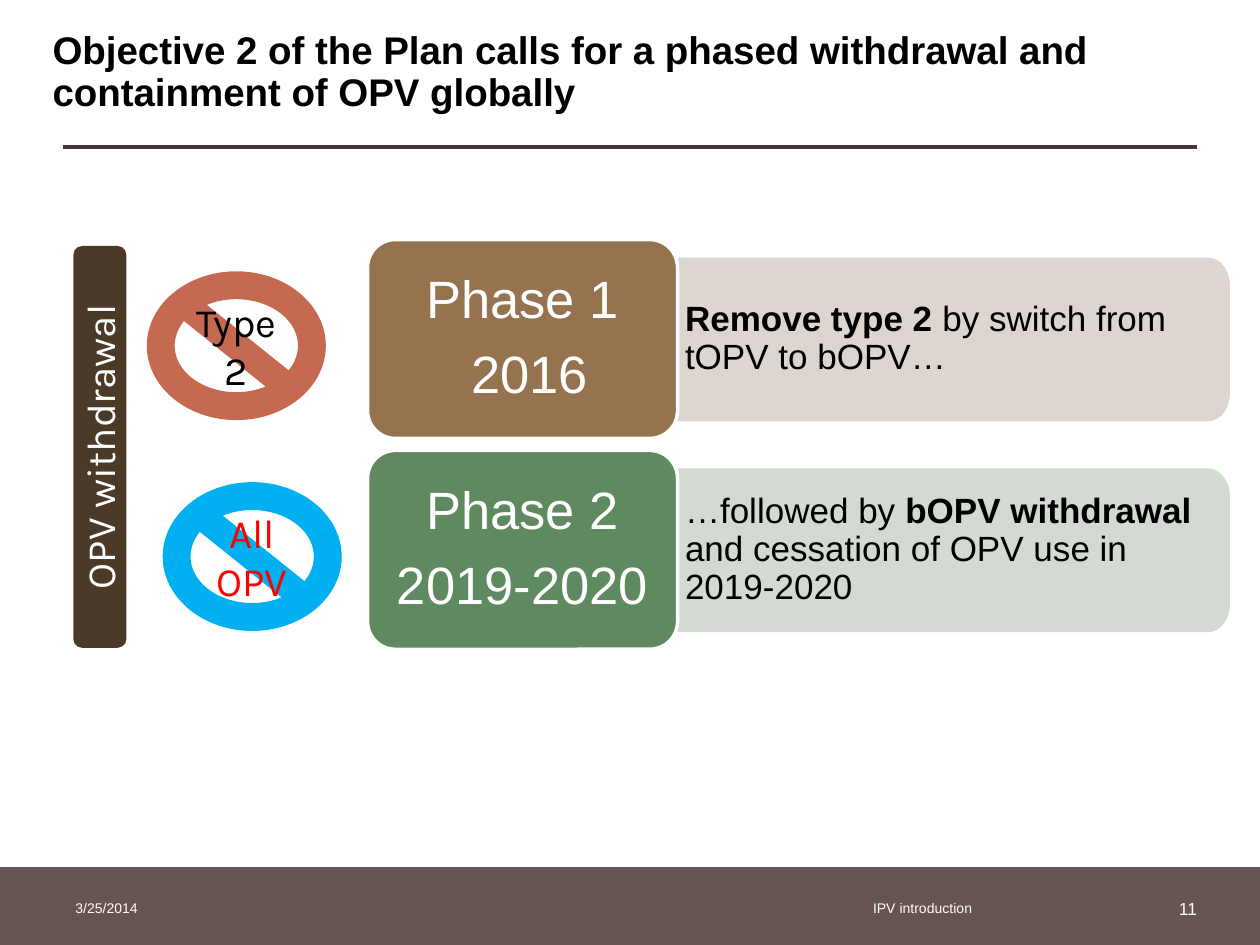
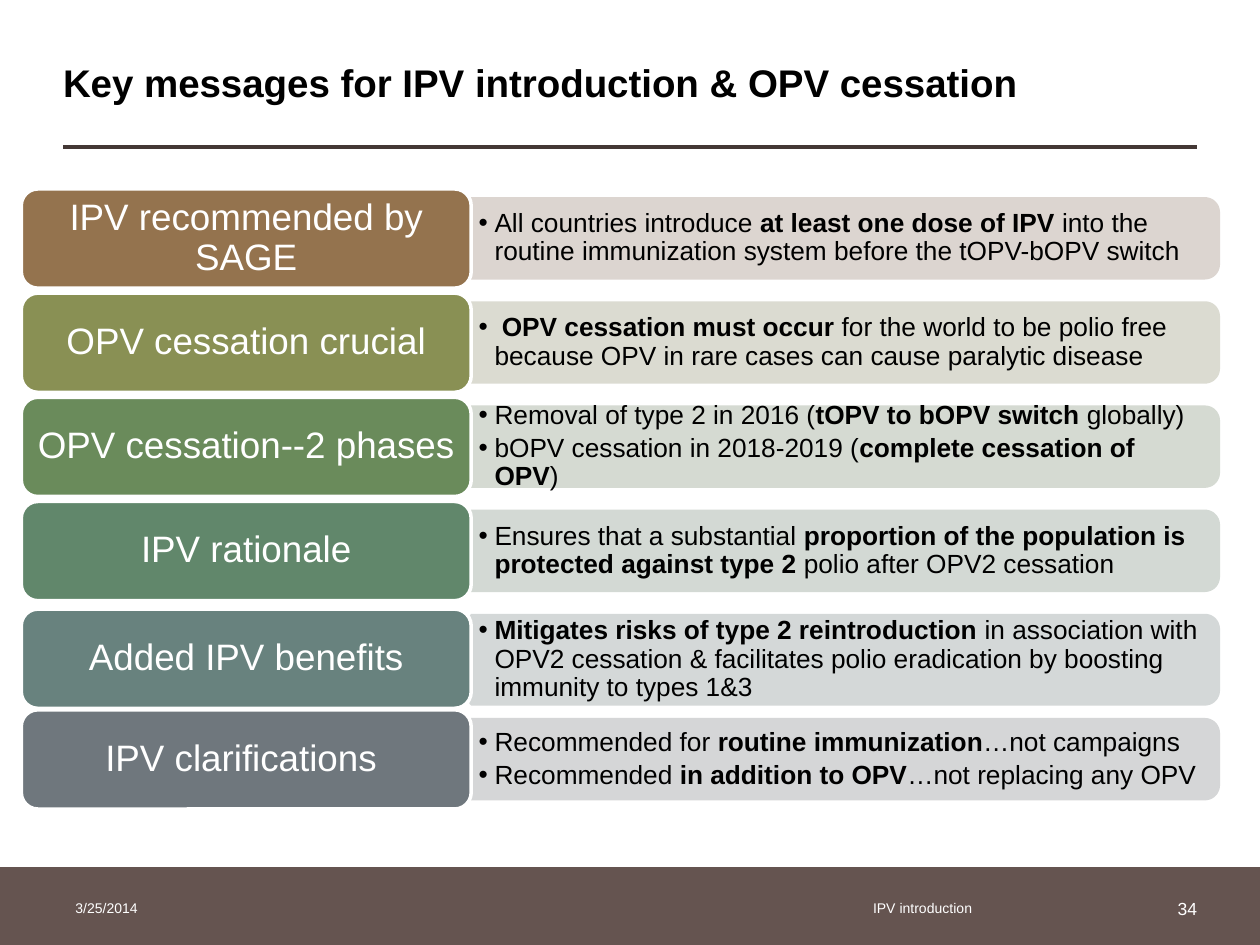
from dataclasses import dataclass
from math import cos, pi, sin
from typing import NamedTuple

from lxml.etree import SubElement
from pptx import Presentation
from pptx.dml.color import RGBColor
from pptx.enum.shapes import MSO_CONNECTOR, MSO_SHAPE
from pptx.enum.text import MSO_ANCHOR, PP_ALIGN
from pptx.oxml.ns import qn
from pptx.util import Cm, Pt

HEX = {
    "white": "FFFFFF", "black": "000000", "red": "FF0000",
    "rule": "443835", "band": "655450", "bar": "4A3A27",
    "rust": "C66951", "sky": "00B0F0",
    "brown": "94734E", "brown pale": "DCD5D0",
    "green": "5F895E", "green pale": "D3DAD2",
    "olive": "899054", "olive pale": "DBDBD1",
    "leaf": "6A8B5B", "leaf pale": "D5DAD2",
    "pine": "61876B", "pine pale": "D3D9D4",
    "teal": "68827E", "teal pale": "D4D8D8",
    "slate": "6F777D", "slate pale": "D5D6D7",
}
SANS, ROUND = "Arial", "Karla"


class Box(NamedTuple):
    """Left, top, width and height in centimetres."""
    x: float
    y: float
    w: float
    h: float


class Run(NamedTuple):
    text: str
    bold: bool = False


@dataclass
class Style:
    size: float
    ink: str = "black"
    font: str = SANS
    align: PP_ALIGN = PP_ALIGN.LEFT
    pad: tuple = (0.25, 0.13, 0.25, 0.13)
    lead: float = 1.0
    after: float = 0.0  # share of the text size
    dot: bool = False


@dataclass
class Phase:
    tone: str
    head: list
    body: list
    sign: str
    sign_x: float
    sign_fill: str
    sign_ink: str


@dataclass
class Topic:
    tone: str
    head: str
    body: list
    drop: float = 0.0
    tall: float = 1.59


def rgb(name: str) -> RGBColor:
    return RGBColor.from_string(HEX[name])


# Text and shape helpers
def write(shape, paras: list, style: Style, anchor=MSO_ANCHOR.MIDDLE) -> None:
    frame = shape.text_frame
    frame.word_wrap = True
    frame.vertical_anchor = anchor
    (frame.margin_left, frame.margin_top,
     frame.margin_right, frame.margin_bottom) = map(Cm, style.pad)
    for i, runs in enumerate(paras):
        para = frame.add_paragraph() if i else frame.paragraphs[0]
        para.alignment = style.align
        para.line_spacing = style.lead
        para.space_before = Pt(0)
        para.space_after = Pt(round(style.size * style.after, 1))
        if style.dot:
            props = para._p.get_or_add_pPr()
            props.set("marL", str(Cm(0.32)))
            props.set("indent", str(-Cm(0.32)))
            SubElement(props, qn("a:buFont")).set("typeface", SANS)
            SubElement(props, qn("a:buChar")).set("char", "•")
        for part in runs:
            run = para.add_run()
            run.text = part.text
            font = run.font
            font.name, font.size, font.bold = style.font, Pt(style.size), part.bold
            font.color.rgb = rgb(style.ink)


def paint(shape, fill: str, edge: str = "") -> None:
    shape.shadow.inherit = False
    shape.fill.solid()
    shape.fill.fore_color.rgb = rgb(fill)
    if edge:
        shape.line.color.rgb = rgb(edge)
        shape.line.width = Pt(2)
    else:
        shape.line.fill.background()


def draw(slide, kind: MSO_SHAPE, box: Box, fill: str, edge: str = ""):
    shape = slide.shapes.add_shape(kind, *map(Cm, box))
    paint(shape, fill, edge)
    return shape


def panel(slide, box: Box, rx: float, ry: float, tone: str):
    """Draw a pale box with round corners on the right side only."""
    right, foot = box.x + box.w, box.y + box.h
    turns = [i * pi / 24 for i in range(13)]
    top = [(right - rx + rx * sin(t), box.y + ry - ry * cos(t)) for t in turns]
    low = [(right - rx + rx * cos(t), foot - ry + ry * sin(t)) for t in turns]
    pen = slide.shapes.build_freeform(Cm(box.x), Cm(box.y))
    pen.add_line_segments([(Cm(x), Cm(y)) for x, y in top + low + [(box.x, foot)]])
    shape = pen.convert_to_shape()
    paint(shape, tone, tone)
    return shape


def label(slide, box: Box, text: str, style: Style) -> None:
    write(slide.shapes.add_textbox(*map(Cm, box)), [[Run(text)]], style)


# Title, rule and footer that every slide has
def start(deck, title: str, box: Box, page: str):
    slide = deck.slides.add_slide(deck.slide_layouts[5])
    rule = slide.shapes.add_connector(
        MSO_CONNECTOR.STRAIGHT, Cm(1.27), Cm(2.97), Cm(24.13), Cm(2.97))
    rule.line.color.rgb = rgb("rule")
    rule.line.width = Pt(2.25)
    SubElement(rule._element.spPr, qn("a:effectLst"))
    draw(slide, MSO_SHAPE.RECTANGLE, Box(0, 17.48, 25.4, 1.57), "band")

    head = slide.shapes.title
    head.left, head.top, head.width, head.height = map(Cm, box)
    write(head, [[Run(title, True)]],
          Style(22, pad=(0, 0, 0, 0), lead=0.9), MSO_ANCHOR.TOP)

    small = Style(8, "white")
    label(slide, Box(1.27, 17.8, 5.92, 1.02), "3/25/2014", small)
    label(slide, Box(17.35, 17.8, 6.4, 1.02), "IPV introduction", small)
    label(slide, Box(23.31, 17.8, 1.07, 1.02), page,
          Style(10, "white", align=PP_ALIGN.RIGHT))
    return slide


# Slide with the two withdrawal phases
PHASES = [
    Phase("brown", ["Phase 1", " 2016"],
          [Run("Remove type 2 ", True), Run("by switch from tOPV to bOPV…")],
          "Type 2", 2.96, "rust", "black"),
    Phase("green", ["Phase 2", "2019-2020"],
          [Run("…followed by "), Run("bOPV withdrawal ", True),
           Run("and cessation of OPV use in 2019-2020")],
          "All OPV", 3.28, "sky", "red"),
]


def phases(deck) -> None:
    slide = start(
        deck, "Objective 2 of the Plan calls for a phased withdrawal and "
        "containment of OPV globally", Box(1.06, 0.64, 22.86, 1.7), "11")
    mid = PP_ALIGN.CENTER
    bar = draw(slide, MSO_SHAPE.ROUNDED_RECTANGLE, Box(1.48, 4.96, 1.07, 8.1), "bar")
    write(bar, [[Run("OPV withdrawal")]], Style(23, "white", ROUND, mid))
    bar.text_frame._txBody.bodyPr.set("vert", "vert270")

    big = Style(30, "white", align=mid, pad=(0.33, 0.18, 0.33, 0.18),
                lead=0.9, after=0.35)
    note = Style(20, pad=(0.15, 0.23, 0.3, 0.23), lead=0.9, after=0.15)
    for i, item in enumerate(PHASES):
        y = 4.83 + 4.25 * i
        body = panel(slide, Box(13.66, y + 0.4, 11.1, 3.23), 0.41, 0.53,
                     item.tone + " pale")
        write(body, [item.body], note)
        head = draw(slide, MSO_SHAPE.ROUNDED_RECTANGLE,
                    Box(7.41, y, 6.25, 4.01), item.tone, "white")
        head.adjustments[0] = 0.14
        write(head, [[Run(text)] for text in item.head], big)
        sign = draw(slide, MSO_SHAPE.NO_SYMBOL,
                    Box(item.sign_x, y + 0.64, 3.61, 3), item.sign_fill)
        write(sign, [[Run(item.sign)]], Style(23, item.sign_ink, ROUND, mid))


# Slide with the key messages
TOPICS = [
    Topic("brown", "IPV recommended by SAGE", [
        [Run("All countries introduce "), Run("at least one dose of IPV ", True),
         Run("into the routine immunization system before the tOPV-bOPV switch")]]),
    Topic("olive", "OPV cessation crucial", [
        [Run(" "), Run("OPV cessation must occur ", True),
         Run("for the world to be polio free because OPV in rare cases "
             "can cause paralytic disease")]]),
    Topic("leaf", "OPV cessation--2 phases", [
        [Run("Removal of type 2 in 2016 ("), Run("tOPV to bOPV switch ", True),
         Run("globally)")],
        [Run("bOPV cessation in 2018-2019 ("),
         Run("complete cessation of OPV", True), Run(")")]]),
    Topic("pine", "IPV rationale", [
        [Run("Ensures that a substantial "),
         Run("proportion of the population is protected against type 2 ", True),
         Run("polio after OPV2 cessation")]]),
    Topic("teal", "Added IPV benefits", [
        [Run("Mitigates risks of type 2 reintroduction ", True),
         Run("in association with OPV2 cessation & facilitates polio "
             "eradication by boosting immunity to types 1&3")]],
          drop=0.07, tall=1.78),
    Topic("slate", "IPV clarifications ", [
        [Run("Recommended for "), Run("routine immunization", True),
         Run("…not campaigns")],
        [Run("Recommended "), Run("in addition to OPV", True),
         Run("…not replacing any OPV")]]),
]


def topics(deck) -> None:
    slide = start(deck, "Key messages for IPV introduction & OPV cessation",
                  Box(1.27, 1.3, 22.86, 0.86), "34")
    big = Style(21, "white", align=PP_ALIGN.CENTER, pad=(0.23, 0.1, 0.23, 0.1),
                lead=0.9, after=0.35)
    note = Style(15, pad=(0.15, 0.15, 0.38, 0.15), lead=0.9, after=0.17, dot=True)
    for i, item in enumerate(TOPICS):
        y = 3.81 + 2.1 * i
        body = panel(slide, Box(9.5, y + 0.2, 15.06, item.tall), 0.27, 0.27,
                     item.tone + " pale")
        write(body, item.body, note)
        head = draw(slide, MSO_SHAPE.ROUNDED_RECTANGLE,
                    Box(0.43, y + item.drop, 9.07, 2), item.tone, "white")
        write(head, [[Run(item.head)]], big)


def main() -> None:
    deck = Presentation()
    deck.slide_width, deck.slide_height = Cm(25.4), Cm(19.05)
    phases(deck)
    topics(deck)
    deck.save("out.pptx")


if __name__ == "__main__":
    main()
